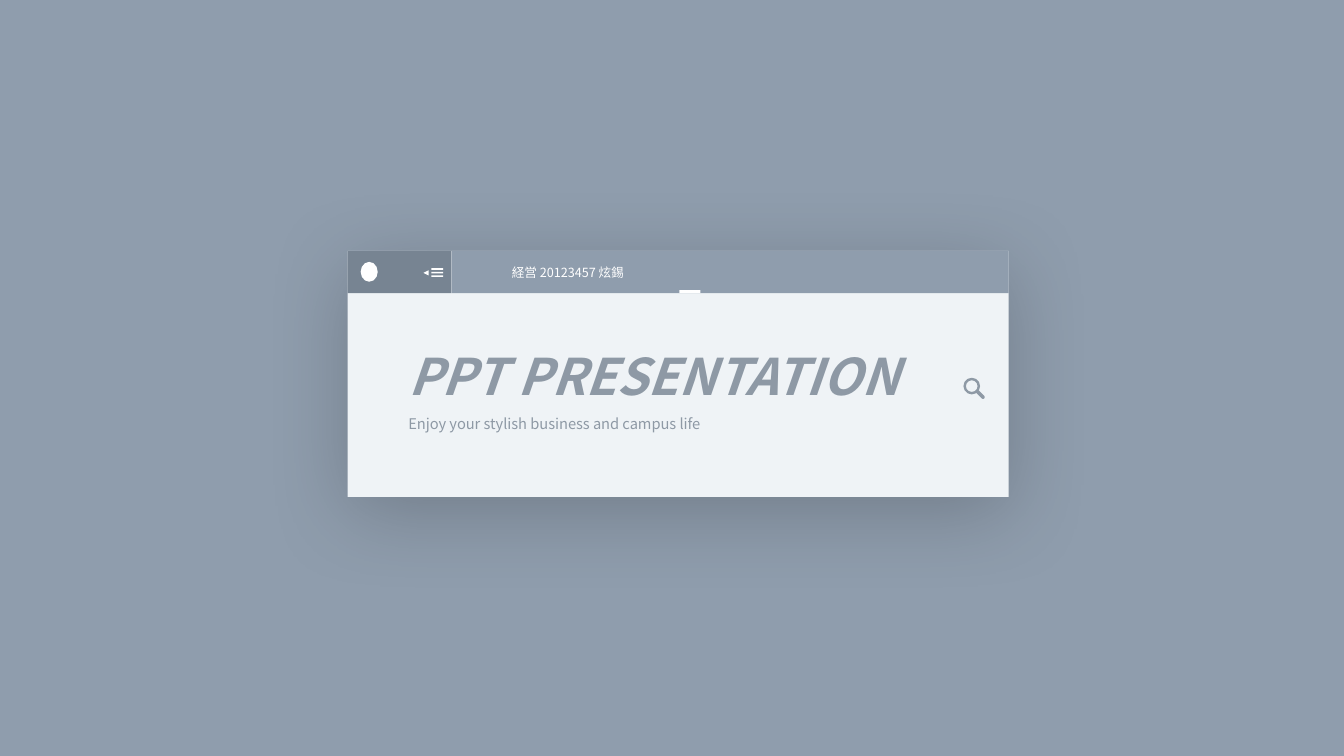
from lxml.etree import SubElement
from pptx import Presentation
from pptx.dml.color import RGBColor
from pptx.enum.shapes import MSO_SHAPE
from pptx.enum.text import MSO_ANCHOR, MSO_AUTO_SIZE, PP_ALIGN
from pptx.oxml.ns import qn
from pptx.util import Cm, Pt

BLUE = RGBColor(0x8F, 0x9D, 0xAD)
SLATE = RGBColor(0x77, 0x84, 0x92)
GREY = RGBColor(0x8E, 0x99, 0xA5)
PALE = RGBColor(0xEF, 0xF3, 0xF6)
WHITE = RGBColor(0xFF, 0xFF, 0xFF)
FONT = "Noto Sans CJK KR"


def add_box(shapes, kind, left, top, width, height, color, turn=0):
    box = shapes.add_shape(kind, Cm(left), Cm(top), Cm(width), Cm(height))
    box.shadow.inherit = False
    box.fill.solid()
    box.fill.fore_color.rgb = color
    box.line.fill.background()
    box.rotation = turn
    return box


def add_shadow(box):
    effects = box._element.spPr.find(qn("a:effectLst"))
    shadow = SubElement(effects, qn("a:outerShdw"), blurRad=str(Pt(61)),
                        dist=str(Pt(12)), dir="5400000", algn="t",
                        rotWithShape="0")
    color = SubElement(shadow, qn("a:srgbClr"), val="000000")
    SubElement(color, qn("a:alpha"), val="20000")


def set_text(shape, text, size, color, strong=False, indent=0):
    frame = shape.text_frame
    frame.word_wrap = True
    frame.auto_size = MSO_AUTO_SIZE.NONE
    frame.vertical_anchor = MSO_ANCHOR.MIDDLE
    frame.margin_left = Cm(indent)
    frame.margin_right = frame.margin_top = frame.margin_bottom = 0
    line = frame.paragraphs[0]
    line.alignment = PP_ALIGN.LEFT
    line.line_spacing = 1
    line.space_before = Pt(0)
    run = line.add_run()
    run.text = text
    font = run.font
    font.name = FONT
    font.size = Pt(size)
    font.bold = font.italic = strong
    font.color.rgb = color
    SubElement(font._element, qn("a:ea"), typeface=FONT)


def place(slide, holder, top, height):
    holder.left, holder.top = Cm(10.29), Cm(top)
    holder.width, holder.height = Cm(13.9), Cm(height)
    slide.shapes._spTree.append(holder._element)


def add_menu(shapes):
    for row in range(3):
        add_box(shapes, MSO_SHAPE.RECTANGLE, 10.87, 6.76 + row * 0.09,
                0.3, 0.04, WHITE)
    add_box(shapes, MSO_SHAPE.ISOSCELES_TRIANGLE, 10.67, 6.81,
            0.13, 0.13, WHITE, 270)


def add_lens(shapes):
    group = shapes.add_group_shape()
    ring = add_box(group.shapes, MSO_SHAPE.DONUT, 24.28, 9.52,
                   0.42, 0.42, GREY)
    ring.adjustments[0] = 0.15
    grip = add_box(group.shapes, MSO_SHAPE.ROUNDED_RECTANGLE, 24.66, 9.8,
                   0.09, 0.28, GREY, 315)
    grip.adjustments[0] = 0.5


def main():
    deck = Presentation()
    deck.slide_width, deck.slide_height = Cm(33.87), Cm(19.05)
    slide = deck.slides.add_slide(deck.slide_layouts[0])
    slide.background.fill.solid()
    slide.background.fill.fore_color.rgb = BLUE
    shapes = slide.shapes

    card = add_box(shapes, MSO_SHAPE.RECTANGLE, 8.76, 6.32, 16.66, 6.2, PALE)
    add_shadow(card)
    add_box(shapes, MSO_SHAPE.RECTANGLE, 8.76, 6.32, 2.62, 1.07, SLATE)
    add_box(shapes, MSO_SHAPE.OVAL, 9.09, 6.6, 0.43, 0.5, WHITE)
    add_menu(shapes)
    bar = add_box(shapes, MSO_SHAPE.RECTANGLE, 11.38, 6.32, 14.04, 1.07, BLUE)
    set_text(bar, "経営 20123457 炫錫", 9, WHITE, indent=1.52)
    add_box(shapes, MSO_SHAPE.RECTANGLE, 17.12, 7.31, 0.53, 0.08, WHITE)
    add_lens(shapes)

    title, note = shapes.title, slide.placeholders[1]
    place(slide, title, 8.53, 1.84)
    set_text(title, "PPT PRESENTATION", 36, GREY, strong=True)
    place(slide, note, 10.41, 0.54)
    set_text(note, "Enjoy your stylish business and campus life", 10.5, GREY)
    deck.save("out.pptx")


if __name__ == "__main__":
    main()
